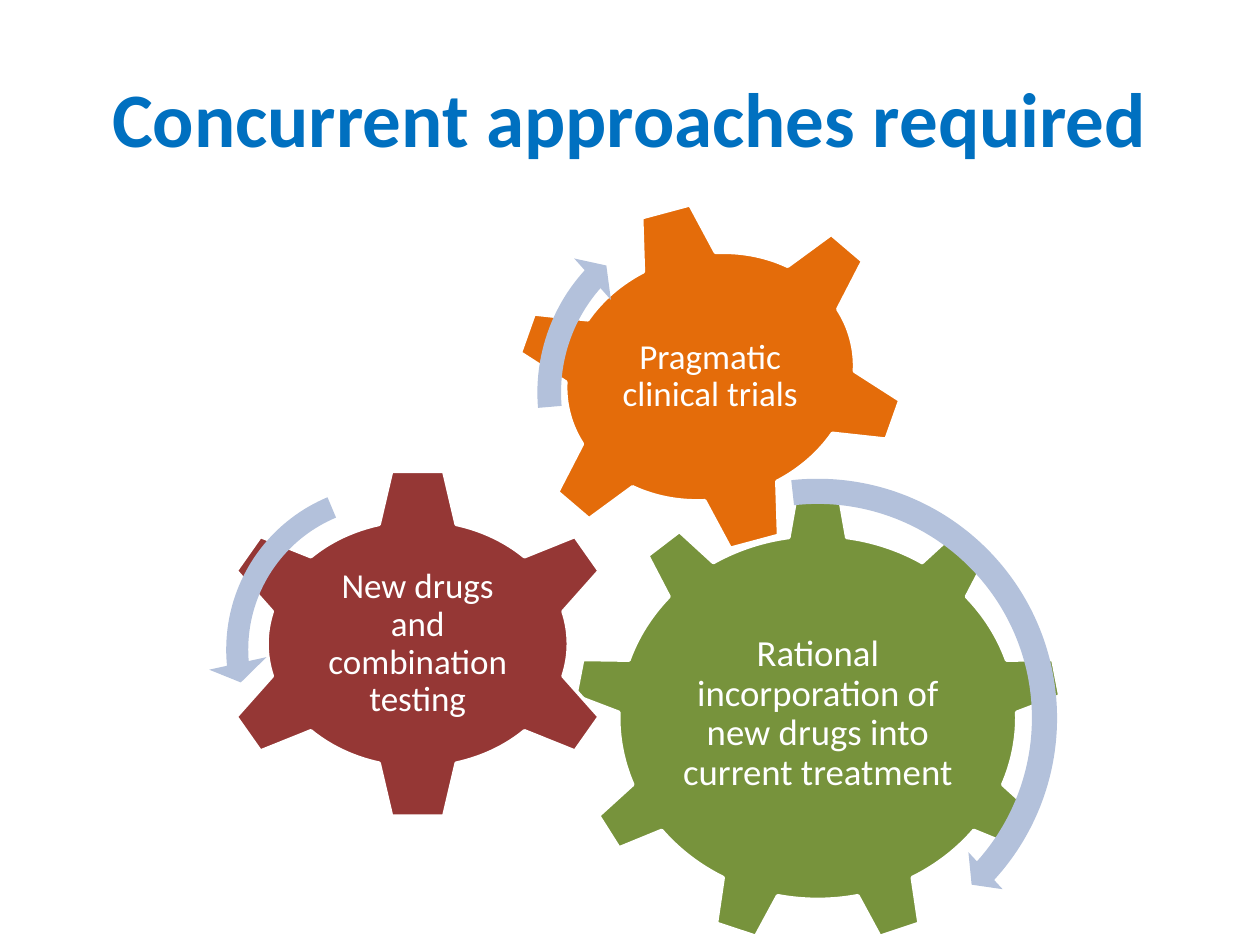
from pptx import Presentation
from pptx.dml.color import RGBColor
from pptx.enum.shapes import MSO_SHAPE
from pptx.enum.text import MSO_ANCHOR, PP_ALIGN
from pptx.util import Pt


def color(code):
    return RGBColor.from_string(code)


class Deck:
    """Holds the style and the current slide, and draws its elements."""

    font = "Calibri"
    blue = "0070C0"
    white = "FFFFFF"
    pale = "B3C1DB"

    def __init__(self):
        self.show = Presentation()
        self.show.slide_width, self.show.slide_height = Pt(720), Pt(540)
        self.slide = self.show.slides.add_slide(self.show.slide_layouts[5])

    def fill_text(self, frame, text, size, code, bold=False):
        frame.text = text
        frame.word_wrap = True
        frame.vertical_anchor = MSO_ANCHOR.MIDDLE
        para = frame.paragraphs[0]
        para.alignment = PP_ALIGN.CENTER
        font = para.runs[0].font
        font.name, font.size, font.bold = self.font, Pt(size), bold
        font.color.rgb = color(code)
        return para

    def title(self, text, left, top, width, height):
        head = self.slide.shapes.title
        head.left, head.top = Pt(left), Pt(top)
        head.width, head.height = Pt(width), Pt(height)
        self.fill_text(head.text_frame, text, 44, self.blue, True)

    def shape(self, kind, code, *box):
        item = self.slide.shapes.add_shape(kind, *map(Pt, box))
        item.shadow.inherit = False
        item.fill.solid()
        item.fill.fore_color.rgb = color(code)
        return item

    def gear(self, kind, code, mid, size, turn=0):
        (x, y), (width, height) = mid, size
        item = self.shape(kind, code, x - width / 2, y - height / 2, width, height)
        item.rotation = turn
        item.line.color.rgb = color(self.white)
        item.line.width = Pt(2)

    def label(self, text, mid, size, points):
        (x, y), (width, height) = mid, size
        box = (x - width / 2, y - height / 2, width, height)
        frame = self.slide.shapes.add_textbox(*map(Pt, box)).text_frame
        frame.margin_left = frame.margin_right = Pt(2)
        frame.margin_top = frame.margin_bottom = Pt(2)
        para = self.fill_text(frame, text, points, self.white)
        para.line_spacing = 0.9

    def arrow(self, kind, left, top, size, bends):
        item = self.shape(kind, self.pale, left, top, size, size)
        item.line.fill.background()
        for spot, bend in enumerate(bends):
            item.adjustments[spot] = bend


def main():
    deck = Deck()
    deck.title("Concurrent approaches required", 36, 21.6, 648, 90)

    green, red, gold = (467.3, 410), (238.7, 367.9), (405.8, 215.2)
    deck.gear(MSO_SHAPE.GEAR_9, "77933C", green, (279.4, 259.9))
    deck.label("Rational incorporation of new drugs into current treatment",
               (green[0], green[1] - 2), (170, 133.2), 21)
    deck.gear(MSO_SHAPE.GEAR_6, "953735", red, (232.6, 201.6))
    deck.label("New drugs and combination testing", red, (121.7, 99.4), 20)
    deck.gear(MSO_SHAPE.GEAR_6, "E46C0A", gold, (226.8, 200.2), 345)
    deck.label("Pragmatic clinical trials", gold, (123.8, 115.2), 20)

    right, left = MSO_SHAPE.CIRCULAR_ARROW, MSO_SHAPE.LEFT_CIRCULAR_ARROW
    deck.arrow(right, 323.3, 266.4, 288, (0.05, 2.99, 25.36, 158.2, 0.05))
    deck.arrow(left, 118.8, 266.4, 209.5, (0.06, 4.3, 104.89, 148.38, 0.08))
    deck.arrow(right, 298.1, 111.6, 225.4, (0.06, 3.94, 133.14, 105.08, 0.07))
    deck.show.save("out.pptx")


if __name__ == "__main__":
    main()
